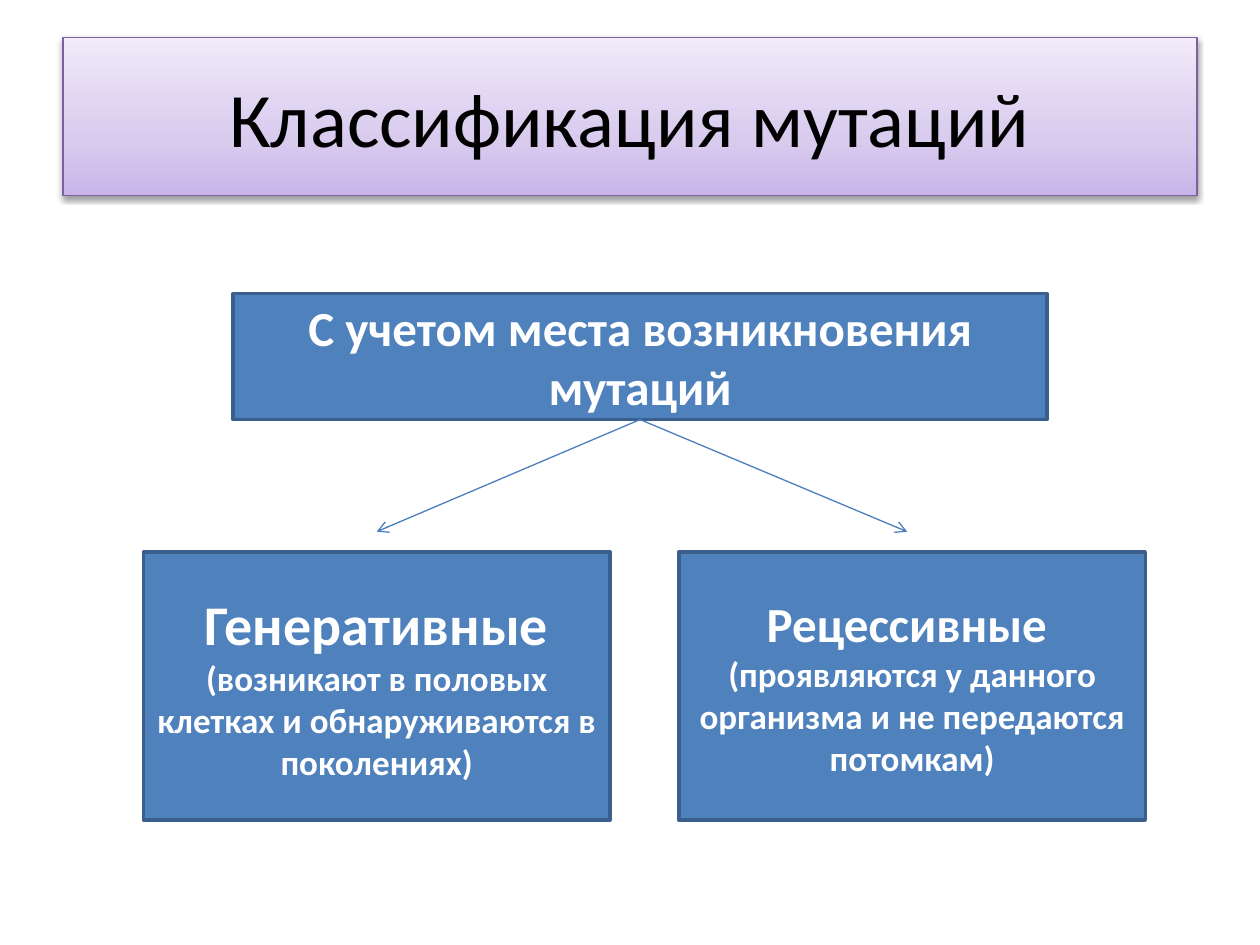
from lxml.etree import SubElement
from pptx import Presentation
from pptx.dml.color import RGBColor
from pptx.enum.shapes import MSO_CONNECTOR as Connector, MSO_SHAPE as Shape
from pptx.enum.text import MSO_ANCHOR as Anchor, PP_ALIGN as Align
from pptx.oxml.ns import qn
from pptx.util import Inches, Pt

FONT = "Calibri"
TITLE_STOPS = [(0, "C9B5E8"), (35, "D8CBEE"), (100, "F0EAF9")]
BOTTOM = 2  # connection site at the middle of the lower side


def color(hex_value):
    return RGBColor.from_string(hex_value)


def style_line(line, hex_value, width):
    line.color.rgb = color(hex_value)
    line.width = Pt(width)


def style_run(run, size, hex_value, bold):
    run.font.name = FONT
    run.font.size = Pt(size)
    run.font.bold = bold
    run.font.color.rgb = color(hex_value)


def fill_gradient(shape, stops, angle):
    shape.fill.gradient()
    shape.fill.gradient_angle = angle
    stop_list = next(shape.element.spPr.iter(qn("a:gsLst")))
    for old_stop in list(stop_list):
        stop_list.remove(old_stop)
    for position, hex_value in stops:
        stop = SubElement(stop_list, qn("a:gs"), pos=str(position * 1000))
        SubElement(stop, qn("a:srgbClr"), val=hex_value)


def add_soft_shadow(shape):
    shape.shadow.inherit = False
    effects = shape.element.spPr.find(qn("a:effectLst"))
    shadow = SubElement(effects, qn("a:outerShdw"), blurRad=str(Pt(3.1)),
                        dist=str(Pt(1.6)), dir="5400000", rotWithShape="0")
    tint = SubElement(shadow, qn("a:srgbClr"), val="000000")
    SubElement(tint, qn("a:alpha"), val="38000")


def format_title(title, text):
    title.left, title.top = Inches(0.5), Inches(0.3)
    title.width, title.height = Inches(9), Inches(1.25)
    fill_gradient(title, TITLE_STOPS, 90)
    style_line(title.line, "7D60A0", 0.75)
    add_soft_shadow(title)
    frame = title.text_frame
    frame.text = text
    frame.vertical_anchor = Anchor.MIDDLE
    frame.paragraphs[0].alignment = Align.CENTER
    style_run(frame.paragraphs[0].runs[0], 44, "000000", False)


def add_box(slide, left, top, width, height, paragraphs):
    """Each paragraph is a list of (text, size) runs."""
    box = slide.shapes.add_shape(Shape.RECTANGLE, Inches(left), Inches(top),
                                 Inches(width), Inches(height))
    box.shadow.inherit = False
    box.fill.solid()
    box.fill.fore_color.rgb = color("4F81BD")
    style_line(box.line, "3A5F8C", 2)
    frame = box.text_frame
    frame.word_wrap = True
    frame.vertical_anchor = Anchor.MIDDLE
    for index, runs in enumerate(paragraphs):
        paragraph = frame.add_paragraph() if index else frame.paragraphs[0]
        paragraph.alignment = Align.CENTER
        for text, size in runs:
            run = paragraph.add_run()
            run.text = text
            style_run(run, size, "FFFFFF", True)
    return box


def add_arrow(slide, source, end_x, end_y):
    arrow = slide.shapes.add_connector(
        Connector.STRAIGHT, source.left + source.width // 2,
        source.top + source.height, Inches(end_x), Inches(end_y))
    arrow.begin_connect(source, BOTTOM)
    style_line(arrow.line, "4B7EBC", 0.75)
    SubElement(arrow.line._get_or_add_ln(), qn("a:tailEnd"), type="arrow")
    SubElement(arrow.element.spPr, qn("a:effectLst"))


def main():
    deck = Presentation()
    deck.slide_width, deck.slide_height = Inches(10), Inches(7.5)
    slide = deck.slides.add_slide(deck.slide_layouts[5])
    format_title(slide.shapes.title, "Классификация мутаций")

    # Criterion of the classification
    criterion = add_box(slide, 1.85, 2.33, 6.46, 1,
                        [[("С учетом места возникновения мутаций", 28)]])

    # Two kinds of mutation
    kinds = [
        (1.14, [[("Генеративные ", 32),
                 ("(возникают в половых клетках и обнаруживаются в поколениях)", 20)]]),
        (5.39, [[("Рецессивные ", 28)],
                [("(проявляются у данного организма и не передаются потомкам)", 20)]]),
    ]
    for left, paragraphs in kinds:
        add_box(slide, left, 4.38, 3.7, 2.13, paragraphs)

    # Arrows from the criterion to the kinds
    for end_x in (2.99, 7.2):
        add_arrow(slide, criterion, end_x, 4.22)

    deck.save("out.pptx")


if __name__ == "__main__":
    main()
